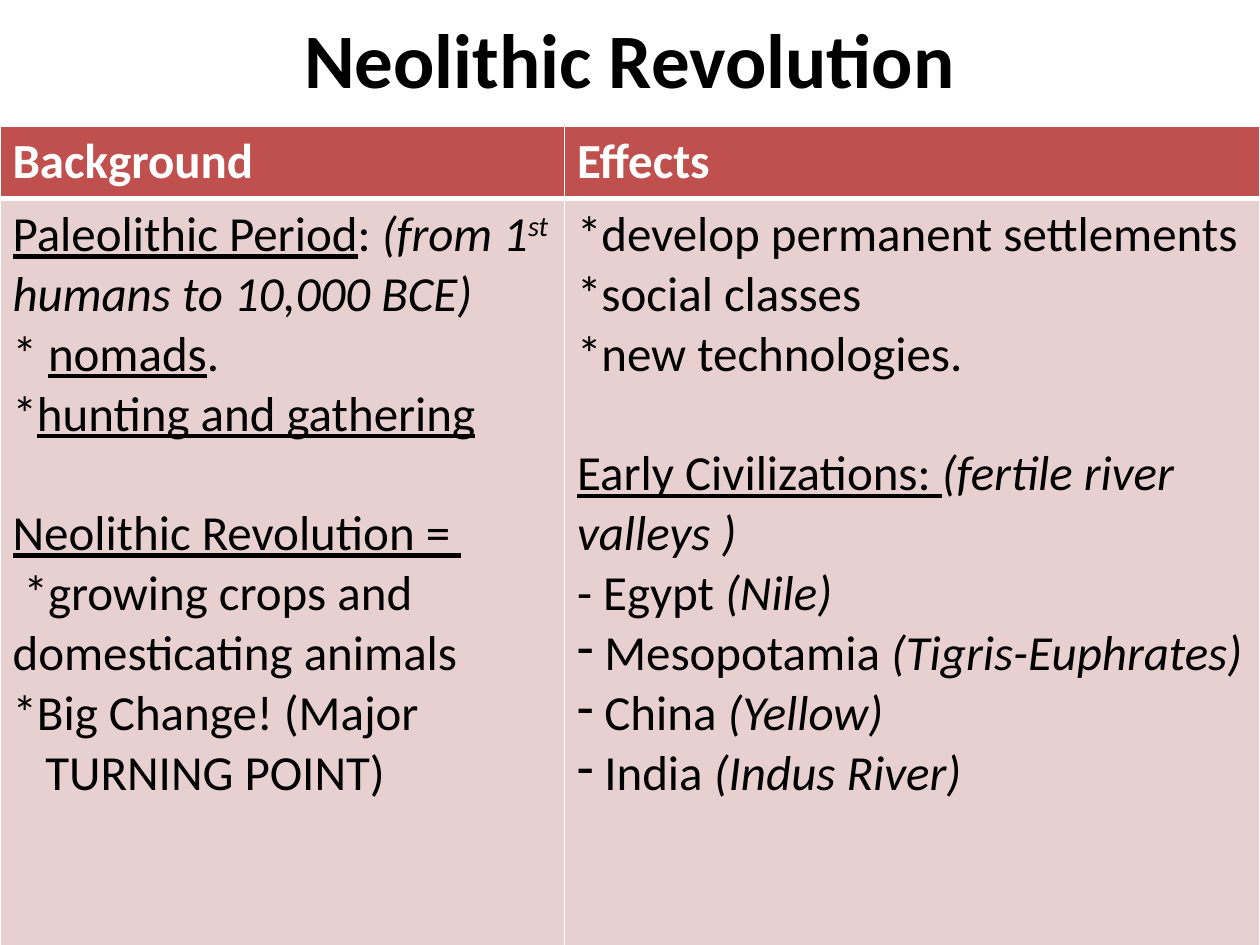
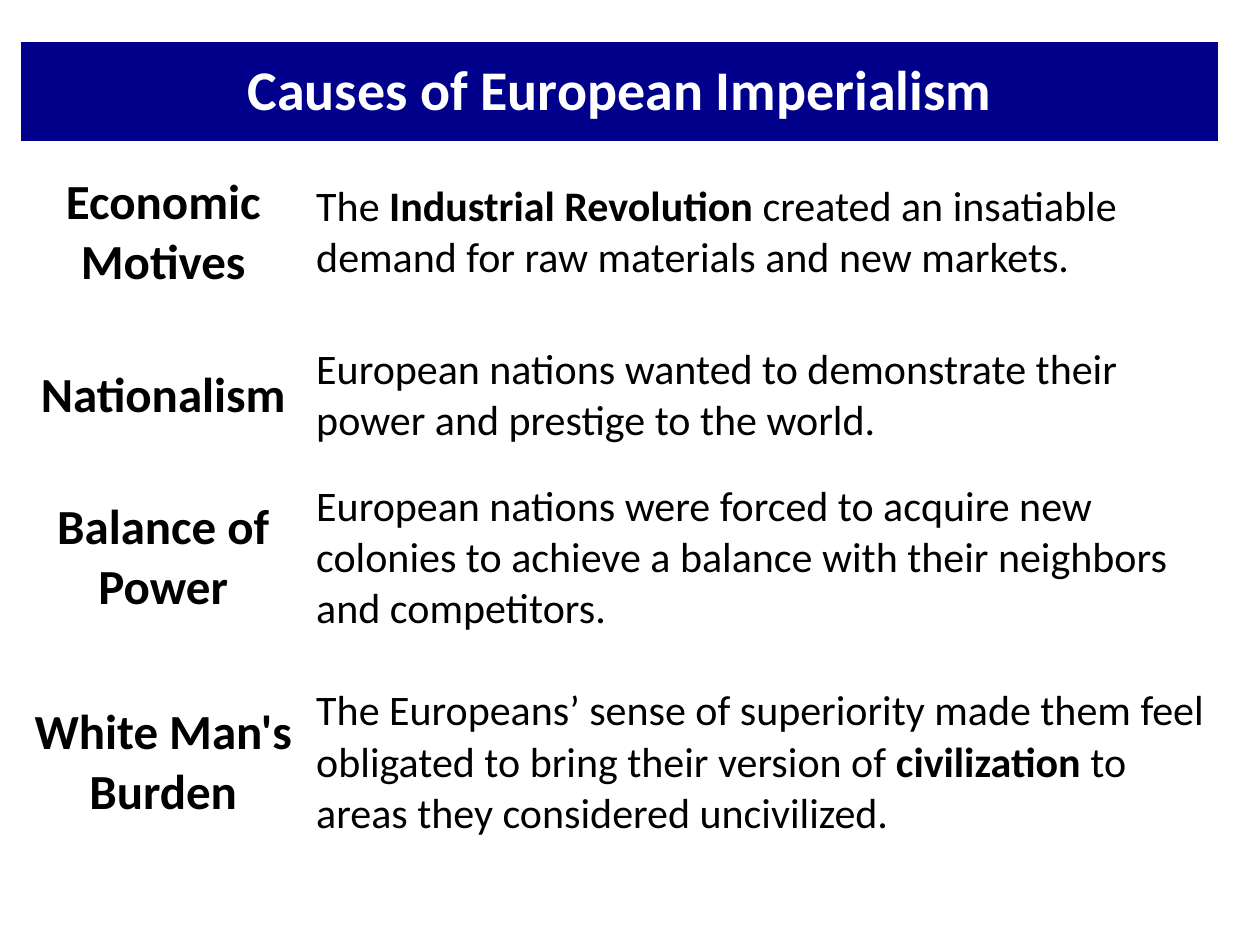
import pptx
import pptx.dml.color
import pptx.enum.text
import pptx.oxml
import pptx.oxml.ns
import pptx.util

FONT = "Calibri"
BLACK, WHITE = "000000", "FFFFFF"
RED, PINK, NAVY = "C0504D", "E8D0D0", "00008B"
WIDTH, HEIGHT = 10, 7.5
BODY_SIZE = 28
BLANK_LINE = 34.2
CENTER = pptx.enum.text.PP_ALIGN.CENTER
MIDDLE = pptx.enum.text.MSO_ANCHOR.MIDDLE

BACKGROUND = [
    {"runs": [("Paleolithic Period", "u"), (": ", ""), ("(from 1", "i"), ("st", "i^"),
              (" humans to 10,000 BCE)", "i")]},
    {"runs": [("* ", ""), ("nomads", "u"), (".", "")]},
    {"runs": [("*", ""), ("hunting and gathering", "u")]},
    {"runs": [("Neolithic Revolution = ", "u")], "before": BLANK_LINE},
    {"runs": [(" *growing crops and domesticating animals", "")]},
    {"runs": [("*Big Change! (Major", "")]},
    {"runs": [("TURNING POINT)", "")], "indent": 0.26},
]
EFFECTS = [
    {"runs": [("*develop permanent settlements", "")]},
    {"runs": [("*social classes", "")]},
    {"runs": [("*new technologies.", "")]},
    {"runs": [("Early Civilizations: ", "u"), ("(fertile river valleys )", "i")],
     "before": BLANK_LINE},
    {"runs": [("- Egypt ", ""), ("(Nile)", "i")]},
    {"runs": [(" Mesopotamia ", ""), ("(Tigris-Euphrates)", "i")], "bullet": "-"},
    {"runs": [(" China ", ""), ("(Yellow)", "i")], "bullet": "-"},
    {"runs": [(" India ", ""), ("(Indus River)", "i")], "bullet": "-"},
]
CAUSES = [
    ("Economic Motives", [
        ("The ", ""), ("Industrial Revolution", "b"),
        (" created an insatiable demand for raw materials and new markets.", "")]),
    ("Nationalism", [
        ("European nations wanted to demonstrate their power and prestige to the world.", "")]),
    ("Balance of Power", [
        ("European nations were forced to acquire new colonies to achieve a balance "
         "with their neighbors and competitors.", "")]),
    ("White Man's Burden", [
        ("The Europeans’ sense of superiority made them feel obligated to bring their version of ", ""),
        ("civilization", "b"), (" to areas they considered uncivilized.", "")]),
]


def color(value):
    """Turn a hex string into a colour."""
    return pptx.dml.color.RGBColor.from_string(value)


def add_run(paragraph, text, style, size, text_color):
    """Add a run styled by letters: b bold, i italic, u underlined, ^ raised."""
    run = paragraph.add_run()
    run.text = text
    font = run.font
    font.name, font.size = FONT, pptx.util.Pt(size)
    font.color.rgb = color(text_color)
    font.bold, font.italic, font.underline = (letter in style for letter in "biu")
    if "^" in style:
        run._r.get_or_add_rPr().set("baseline", "30000")


def write(text_frame, lines, size=BODY_SIZE, text_color=BLACK, align=None):
    """Write lines of runs, each with optional space, indent and bullet."""
    for index, line in enumerate(lines):
        paragraph = text_frame.add_paragraph() if index else text_frame.paragraphs[0]
        paragraph.alignment = align
        properties = paragraph._p.get_or_add_pPr()
        properties.set("marL", str(pptx.util.Inches(line.get("indent", 0))))
        properties.set("indent", "0")
        if "before" in line:
            paragraph.space_before = pptx.util.Pt(line["before"])
        if "bullet" in line:
            bullet = pptx.oxml.parse_xml(
                f'<a:buChar {pptx.oxml.ns.nsdecls("a")} char="{line["bullet"]}"/>')
            properties.append(bullet)
        for text, style in line["runs"]:
            add_run(paragraph, text, style, size, text_color)


def set_borders(cell, widths):
    """Draw white left, right, top and bottom borders; a zero width means none."""
    properties = cell._tc.get_or_add_tcPr()
    for side, width in zip("LRTB", widths):
        paint = f'<a:solidFill><a:srgbClr val="{WHITE}"/></a:solidFill>' if width else "<a:noFill/>"
        properties.append(pptx.oxml.parse_xml(
            f'<a:ln{side} {pptx.oxml.ns.nsdecls("a")} w="{pptx.util.Pt(width)}">{paint}</a:ln{side}>'))


def style_cell(cell, fill=None, borders=(0, 0, 0, 0), anchor=None):
    """Set the borders, fill and anchor of a cell."""
    set_borders(cell, borders)
    if fill:
        cell.fill.solid()
        cell.fill.fore_color.rgb = color(fill)
    else:
        cell.fill.background()
    cell.vertical_anchor = anchor


def add_table(slide, box, columns, rows):
    """Add a plain table whose columns and rows are shares of its box."""
    left, top, width, height = box
    frame = slide.shapes.add_table(
        len(rows), len(columns), pptx.util.Inches(left), pptx.util.Inches(top),
        pptx.util.Inches(width), pptx.util.Inches(height))
    table = frame.table
    table.first_row = table.horz_banding = False
    for column, share in zip(table.columns, columns):
        column.width = pptx.util.Inches(width * share / sum(columns))
    for row, share in zip(table.rows, rows):
        row.height = pptx.util.Inches(height * share / sum(rows))
    return table


def place_title(slide, box, text):
    """Move the title placeholder into its box and write it."""
    title = slide.shapes.title
    title.left, title.top, title.width, title.height = map(pptx.util.Inches, box)
    title.text_frame.vertical_anchor = MIDDLE
    write(title.text_frame, [{"runs": [(text, "b")]}], 44, BLACK, CENTER)


def build_revolution(presentation):
    """Build the slide with a title over a two-column notes table."""
    slide = presentation.slides.add_slide(presentation.slide_layouts[5])
    place_title(slide, (0.05 * WIDTH, 0, 0.9 * WIDTH, 0.92), "Neolithic Revolution")
    table = add_table(slide, (0, 1, WIDTH, HEIGHT - 1), (4.48, 5.52), (0.55, 5.95))
    notes = (("Background", BACKGROUND), ("Effects", EFFECTS))
    for column, (heading, lines) in enumerate(notes):
        header, body = table.cell(0, column), table.cell(1, column)
        style_cell(header, RED, (1, 1, 1, 3))
        write(header.text_frame, [{"runs": [(heading, "b")]}], text_color=WHITE)
        style_cell(body, PINK, (1, 1, 3, 1))
        write(body.text_frame, lines)


def build_causes(presentation):
    """Build the slide with a banner over rows of causes and explanations."""
    slide = presentation.slides.add_slide(presentation.slide_layouts[6])
    box = (0.17, 0.33, 0.95 * WIDTH, 6.62)
    table = add_table(slide, box, (2.25, 7.25), (0.79, 1.46, 1.12, 1.46, 1.79))
    banner = table.cell(0, 0)
    banner.merge(table.cell(0, 1))
    style_cell(banner, NAVY, anchor=MIDDLE)
    write(banner.text_frame, [{"runs": [("Causes of European Imperialism", "b")]}],
          32, WHITE, CENTER)
    for row, (cause, explanation) in enumerate(CAUSES, 1):
        for column in range(2):
            cell = table.cell(row, column)
            style_cell(cell, anchor=MIDDLE)
            cell.margin_left = cell.margin_right = pptx.util.Inches(0.09)
            cell.margin_top = cell.margin_bottom = pptx.util.Inches(0.04)
        write(table.cell(row, 0).text_frame, [{"runs": [(cause, "b")]}], align=CENTER)
        write(table.cell(row, 1).text_frame, [{"runs": explanation}], 24)


def main():
    """Build and save the presentation."""
    presentation = pptx.Presentation()
    presentation.slide_width = pptx.util.Inches(WIDTH)
    presentation.slide_height = pptx.util.Inches(HEIGHT)
    build_revolution(presentation)
    build_causes(presentation)
    presentation.save("out.pptx")


if __name__ == "__main__":
    main()
